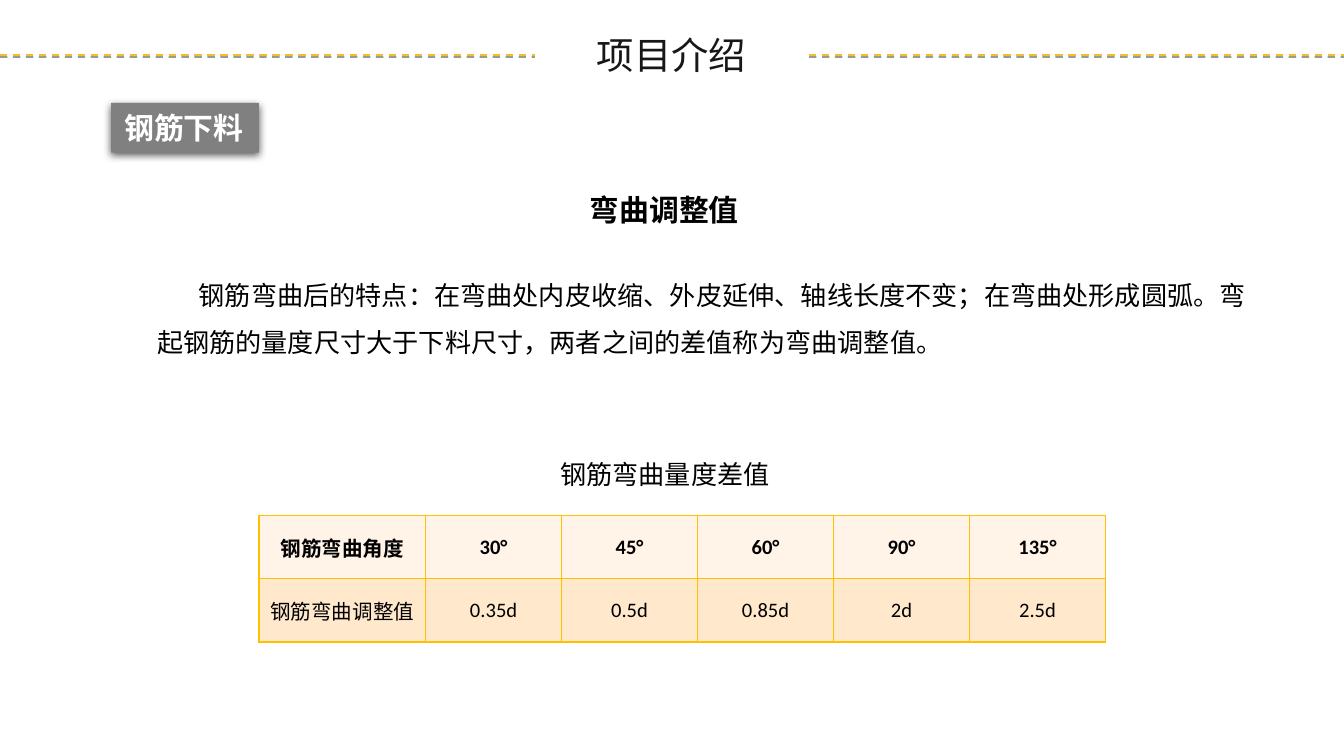
"""Build the slide on bending adjustment of steel bars."""
from dataclasses import dataclass

from lxml.etree import SubElement
from pptx import Presentation
from pptx.dml.color import RGBColor
from pptx.enum.dml import MSO_LINE
from pptx.enum.shapes import MSO_CONNECTOR, MSO_SHAPE
from pptx.enum.text import MSO_ANCHOR, MSO_AUTO_SIZE, PP_ALIGN
from pptx.oxml.ns import qn
from pptx.util import Emu, Inches, Pt

HAN = "Noto Sans CJK SC"
GOLD = "FFC000"
COLS = 100
WIDE = Inches(10)
HIGH = Emu(WIDE * 9 // 16)


@dataclass(frozen=True)
class Box:
    """A place in grid columns and rows, each a hundredth of the slide's width."""
    left: float
    top: float
    width: float
    height: float

    def spans(self) -> list[Emu]:
        """Return the four lengths for python-pptx."""
        return [grid(n) for n in (self.left, self.top, self.width, self.height)]


@dataclass(frozen=True)
class Note:
    """A free text with its place and format."""
    box: Box
    text: str
    size: int
    bold: bool = False
    indent: float = 0


NOTES = [
    Note(Box(42.9, 12.4, 14.2, 5), "弯曲调整值", 16, bold=True),
    Note(Box(10.7, 19.3, 84.2, 7.7),
         "钢筋弯曲后的特点：在弯曲处内皮收缩、外皮延伸、轴线长度不变；在弯曲处形成圆弧。"
         "弯起钢筋的量度尺寸大于下料尺寸，两者之间的差值称为弯曲调整值。",
         14, indent=3.1),
    Note(Box(40.7, 32.65, 18, 4.1), "钢筋弯曲量度差值", 14),
]
ROWS = [
    ["钢筋弯曲角度", "30°", "45°", "60°", "90°", "135°"],
    ["钢筋弯曲调整值", "0.35d", "0.5d", "0.85d", "2d", "2.5d"],
]
FILLS = ["FFF4E7", "FFE8CC"]


def grid(count: float) -> Emu:
    """Turn a count of grid units into a length."""
    return Emu(round(WIDE * count / COLS))


def color(code: str) -> RGBColor:
    """Turn a hex string into a colour."""
    return RGBColor.from_string(code)


def write(frame, text: str, *, size: int, ink: str = "000000", bold: bool = False,
          font: str = HAN, align: PP_ALIGN = PP_ALIGN.LEFT, space: float = 1,
          indent: float = 0) -> None:
    """Write one formatted paragraph into a text frame."""
    para = frame.paragraphs[0]
    para.alignment = align
    para.line_spacing = space
    if indent:
        para._p.get_or_add_pPr().set("indent", str(grid(indent)))
    run = para.add_run()
    run.text = text
    run.font.size = Pt(size)
    run.font.bold = bold
    run.font.color.rgb = color(ink)
    run.font.name = font
    SubElement(run._r.get_or_add_rPr(), qn("a:ea"), typeface=HAN)


def fit(frame, anchor: MSO_ANCHOR, wrap: bool = True) -> None:
    """Let a text box grow with its text."""
    frame.word_wrap = wrap
    frame.vertical_anchor = anchor
    frame.auto_size = MSO_AUTO_SIZE.SHAPE_TO_FIT_TEXT


def shade(shape, blur: float, drop: float, alpha: int) -> None:
    """Give a shape a black shadow straight below it."""
    props = shape._element.spPr
    effect = SubElement(props, qn("a:effectLst"))
    outer = SubElement(effect, qn("a:outerShdw"), blurRad=str(Pt(blur)),
                       dist=str(Pt(drop)), dir="5400000", algn="t", rotWithShape="0")
    black = SubElement(outer, qn("a:srgbClr"), val="000000")
    SubElement(black, qn("a:alpha"), val=str(alpha * 1000))


def rule(slide, start: float, end: float, row: float) -> None:
    """Draw one dashed rule beside the title."""
    line = slide.shapes.add_connector(
        MSO_CONNECTOR.STRAIGHT, grid(start), grid(row), grid(end), grid(row))
    line.line.color.rgb = color("F0BF29")
    line.line.width = Pt(1)
    line.line.dash_style = MSO_LINE.DASH
    shade(line, 0, 1, 40)


def head(slide, text: str, box: Box) -> None:
    """Place the slide title."""
    title = slide.shapes.title
    title.left, title.top, title.width, title.height = box.spans()
    fit(title.text_frame, MSO_ANCHOR.TOP, wrap=False)
    title.text_frame.margin_right = 0
    write(title.text_frame, text, size=20, ink="181717")


def badge(slide, text: str, box: Box) -> None:
    """Draw the grey section badge."""
    shape = slide.shapes.add_shape(MSO_SHAPE.RECTANGLE, *box.spans())
    shape.fill.solid()
    shape.fill.fore_color.rgb = color("808080")
    shape.line.fill.background()
    shade(shape, 4.5, 1.5, 63)
    fit(shape.text_frame, MSO_ANCHOR.TOP)
    write(shape.text_frame, text, size=16, ink="FFFFFF", bold=True)


def note(slide, item: Note) -> None:
    """Add one free text."""
    frame = slide.shapes.add_textbox(*item.box.spans()).text_frame
    fit(frame, MSO_ANCHOR.MIDDLE)
    write(frame, item.text, size=item.size, bold=item.bold,
          space=1.5, indent=item.indent)


def edge(cell) -> None:
    """Put a thin gold border on all sides of a cell."""
    props = cell._tc.get_or_add_tcPr()
    for side in ("lnL", "lnR", "lnT", "lnB"):
        line = SubElement(props, qn(f"a:{side}"), w=str(Pt(1)))
        fill = SubElement(line, qn("a:solidFill"))
        SubElement(fill, qn("a:srgbClr"), val=GOLD)


def table(slide, box: Box, first: float) -> None:
    """Draw the table with a wider first column and equal others."""
    count = len(ROWS[0])
    sheet = slide.shapes.add_table(len(ROWS), count, *box.spans()).table
    rest = (box.width - first) / (count - 1)
    for pos, col in enumerate(sheet.columns):
        col.width = grid(rest if pos else first)
    for row, (texts, fill) in enumerate(zip(ROWS, FILLS)):
        for col, text in enumerate(texts):
            cell = sheet.cell(row, col)
            edge(cell)
            cell.fill.solid()
            cell.fill.fore_color.rgb = color(fill)
            cell.margin_left = cell.margin_right = 0
            cell.margin_top = cell.margin_bottom = 0
            cell.vertical_anchor = MSO_ANCHOR.MIDDLE
            write(cell.text_frame, text, size=11, bold=row == 0,
                  font="Calibri", align=PP_ALIGN.CENTER)


def main() -> None:
    """Build and save the slide."""
    deck = Presentation()
    deck.slide_width, deck.slide_height = WIDE, HIGH
    slide = deck.slides.add_slide(deck.slide_layouts[5])
    for start in (0, 60.2):
        rule(slide, start, start + 39.8, 4.1)
    head(slide, "项目介绍", Box(43.4, 1.9, 13.1, 4.4))
    badge(slide, "钢筋下料", Box(8.27, 7.66, 11, 3.7))
    for item in NOTES:
        note(slide, item)
    table(slide, Box(19.27, 38.36, 63, 9.4), 12.4)
    deck.save("out.pptx")


if __name__ == "__main__":
    main()
